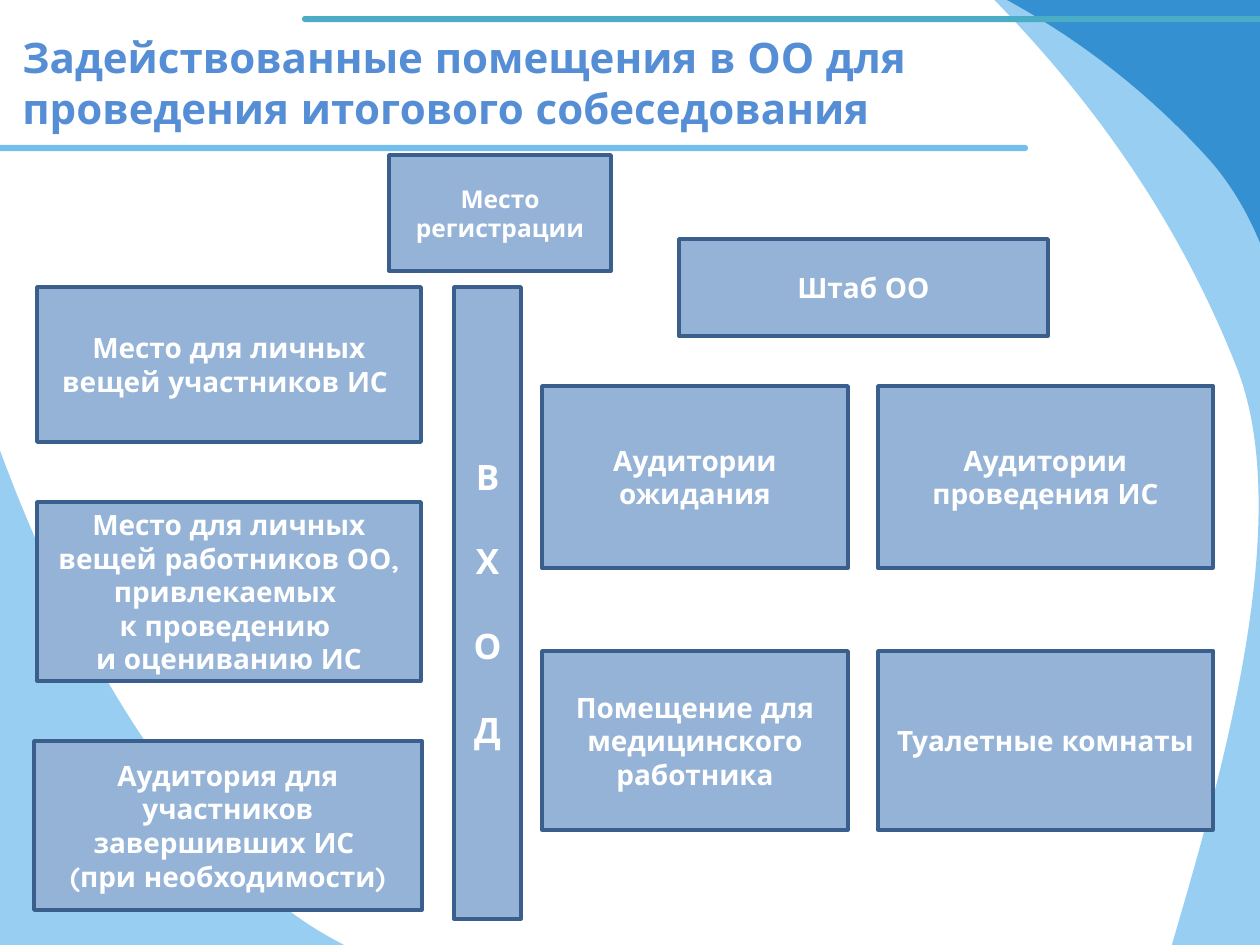
from copy import deepcopy
from dataclasses import dataclass

from lxml import etree
from pptx import Presentation
from pptx.dml.color import RGBColor
from pptx.enum.shapes import MSO_SHAPE
from pptx.enum.text import MSO_ANCHOR, PP_ALIGN
from pptx.oxml.ns import qn
from pptx.util import Emu, Pt

RECTANGLE = MSO_SHAPE.RECTANGLE
ROUNDED = MSO_SHAPE.ROUNDED_RECTANGLE
MIDDLE = MSO_ANCHOR.MIDDLE
LEFT, CENTER = PP_ALIGN.LEFT, PP_ALIGN.CENTER

EMU_PER_PX = 914400 / 126


def px(length):
    return Emu(round(length * EMU_PER_PX))


@dataclass(frozen=True)
class Theme:
    font: str = "Quicksand"
    title: str = "558ED5"
    room_fill: str = "95B3D7"
    room_line: str = "3A5F8C"
    room_text: str = "FFFFFF"
    sky: str = "74BEED"
    deep_blue: str = "0070C0"
    teal: str = "4BACC6"
    title_size: int = 24
    entrance_size: int = 20
    room_size: int = 16
    small_size: int = 14
    line_width: int = 2


def write_text(shape, text, *, font, size, color, align=CENTER, gap=0):
    """Fill a shape with bold text: \\n parts paragraphs, \\v breaks a line."""
    frame = shape.text_frame
    frame.word_wrap = True
    frame.vertical_anchor = MIDDLE
    for index, line in enumerate(text.split("\n")):
        paragraph = frame.paragraphs[0] if index == 0 else frame.add_paragraph()
        paragraph.text = line
        paragraph.alignment = align
        if index and gap:
            paragraph.space_before = Pt(gap)
        for run in paragraph.runs:
            run.font.name = font
            run.font.size = Pt(size)
            run.font.bold = True
            run.font.color.rgb = RGBColor.from_string(color)
        run_format = paragraph.runs[0].font._element
        for line_break in paragraph._p.findall(qn("a:br")):
            line_break.append(deepcopy(run_format))


class SlideBuilder:
    def __init__(self, slide, theme):
        self.shapes = slide.shapes
        self.theme = theme

    def paint(self, shape, fill, line=None):
        shape.shadow.inherit = False
        shape.fill.solid()
        shape.fill.fore_color.rgb = RGBColor.from_string(fill)
        if line:
            shape.line.color.rgb = RGBColor.from_string(line)
            shape.line.width = Pt(self.theme.line_width)
        else:
            shape.line.fill.background()

    def wave(self, points, color, opacity):
        """Draw a closed outline of cubic curves: a start, then three points each."""
        builder = self.shapes.build_freeform(*points[0], scale=EMU_PER_PX)
        builder.add_line_segments(points[1:], close=True)
        wave = builder.convert_to_shape()
        self.paint(wave, color)
        lines = list(wave._element.iter(qn("a:lnTo")))
        for first in range(0, len(points) - 1, 3):
            curve = etree.Element(qn("a:cubicBezTo"))
            lines[first].addprevious(curve)
            for line in lines[first:first + 3]:
                curve.append(line[0])
                line.getparent().remove(line)
        tint = wave._element.spPr.find(qn("a:solidFill"))[0]
        etree.SubElement(tint, qn("a:alpha"), val=str(opacity * 1000))

    def title(self, box, text):
        title = self.shapes.add_textbox(*map(px, box))
        write_text(title, text, font=self.theme.font, size=self.theme.title_size,
                   color=self.theme.title, align=LEFT)

    def bar(self, box, color):
        bar = self.shapes.add_shape(ROUNDED, *map(px, box))
        bar.adjustments[0] = 0.5
        self.paint(bar, color)

    def room(self, box, text, size=None, gap=0):
        room = self.shapes.add_shape(RECTANGLE, *map(px, box))
        self.paint(room, self.theme.room_fill, self.theme.room_line)
        write_text(room, text, font=self.theme.font, size=size or self.theme.room_size,
                   color=self.theme.room_text, gap=gap)


LEFT_WAVE = [
    (242, 1152),
    (410, 1171), (872, 1118), (874, 1071),
    (876, 1026), (413, 1055), (252, 877),
    (-81, 518), (-52, 47), (-180, 68),
    (-307, 89), (-199, 780), (-130, 961),
    (-59, 1142), (76, 1134), (242, 1152),
]
RIGHT_WAVE = [
    (1502, 442),
    (1444, 631), (1186, 1119), (1142, 1106),
    (1097, 1093), (1332, 597), (1235, 363),
    (1043, -117), (582, -239), (659, -373),
    (737, -505), (1347, -161), (1487, -26),
    (1627, 110), (1559, 253), (1502, 442),
]
CORNER_WAVE = [
    (1479, 188),
    (1473, 296), (1372, 558), (1327, 553),
    (1280, 548), (1333, 294), (1206, 156),
    (951, -122), (636, -73), (663, -161),
    (690, -249), (1223, -158), (1360, -100),
    (1494, -42), (1488, 78), (1479, 188),
]

ROOM_COLUMNS = [(542, 306), (878, 335)]  # left, width
ROOM_ROWS = [(386, 182), (651, 179)]  # top, height
ROOM_GRID = [
    ["Аудитории ожидания", "Аудитории проведения ИС"],
    ["Помещение для медицинского работника", "Туалетные комнаты"],
]
SINGLE_ROOMS = [
    ((679, 239, 369, 97), "Штаб ОО"),
    ((37, 287, 384, 155), "Место для личных вещей участников ИС "),
    ((37, 502, 384, 179),
     "Место для личных вещей работников ОО, привлекаемых \v"
     "к проведению \vи оцениванию ИС"),
    ((34, 741, 388, 169),
     "Аудитория для участников завершивших ИС \n(при необходимости)"),
]


def main():
    theme = Theme()
    deck = Presentation()
    deck.slide_width, deck.slide_height = px(1260), px(945)
    plan = SlideBuilder(deck.slides.add_slide(deck.slide_layouts[6]), theme)

    plan.wave(LEFT_WAVE, theme.sky, 74)
    plan.wave(RIGHT_WAVE, theme.sky, 74)
    plan.wave(CORNER_WAVE, theme.deep_blue, 65)
    plan.title((10, 9, 1048, 146),
               "Задействованные помещения в ОО для проведения итогового собеседования")
    plan.bar((-25, 145, 1053, 6), theme.sky)
    plan.bar((302, 16, 1053, 6), theme.teal)

    plan.room((389, 155, 222, 116), "Место регистрации", size=theme.small_size)
    plan.room((454, 287, 67, 632), "\n".join("ВХОД"), size=theme.entrance_size, gap=24)
    for box, name in SINGLE_ROOMS:
        plan.room(box, name)
    for (top, height), names in zip(ROOM_ROWS, ROOM_GRID):
        for (left, width), name in zip(ROOM_COLUMNS, names):
            plan.room((left, top, width, height), name)

    deck.save("out.pptx")


if __name__ == "__main__":
    main()
